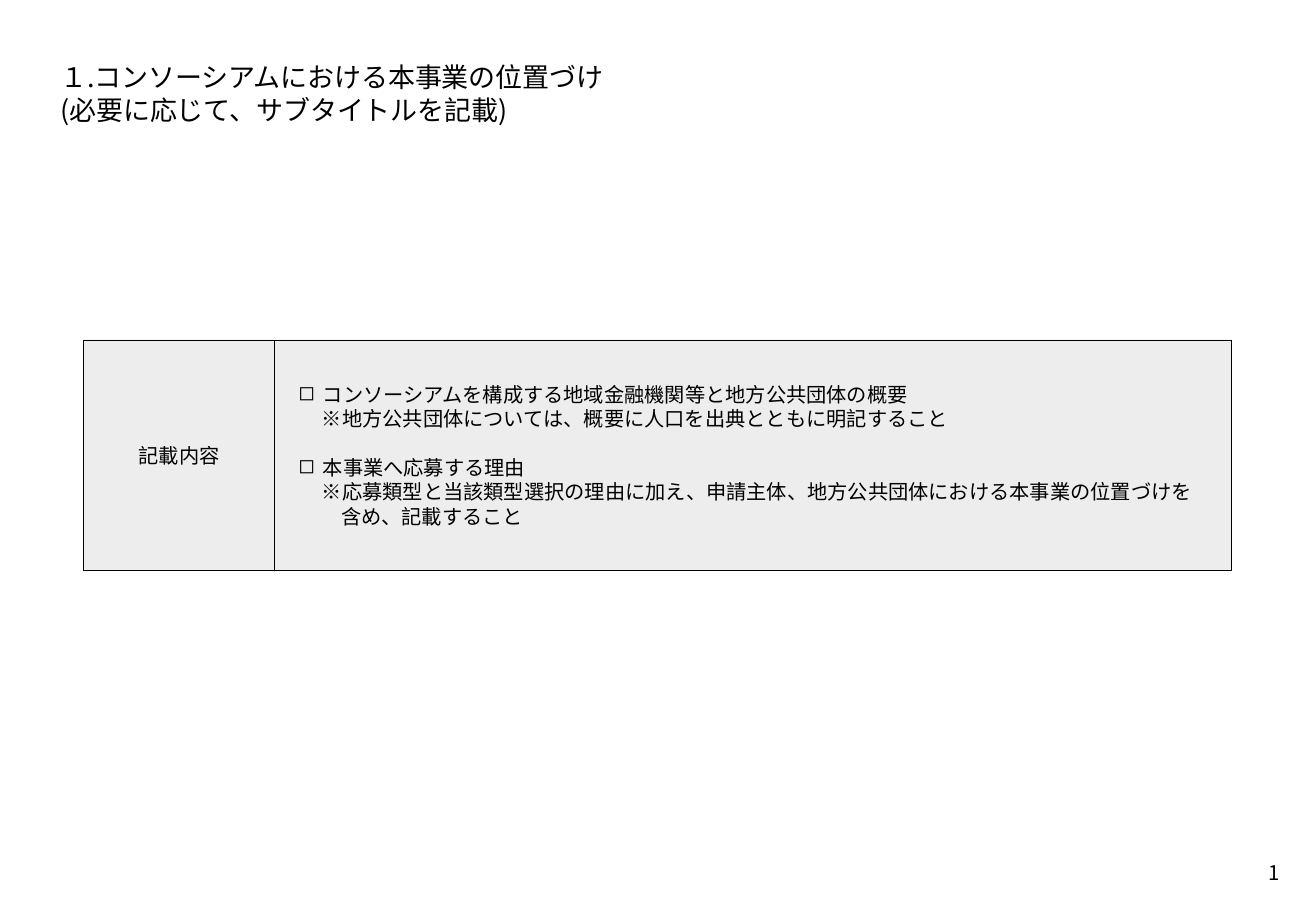
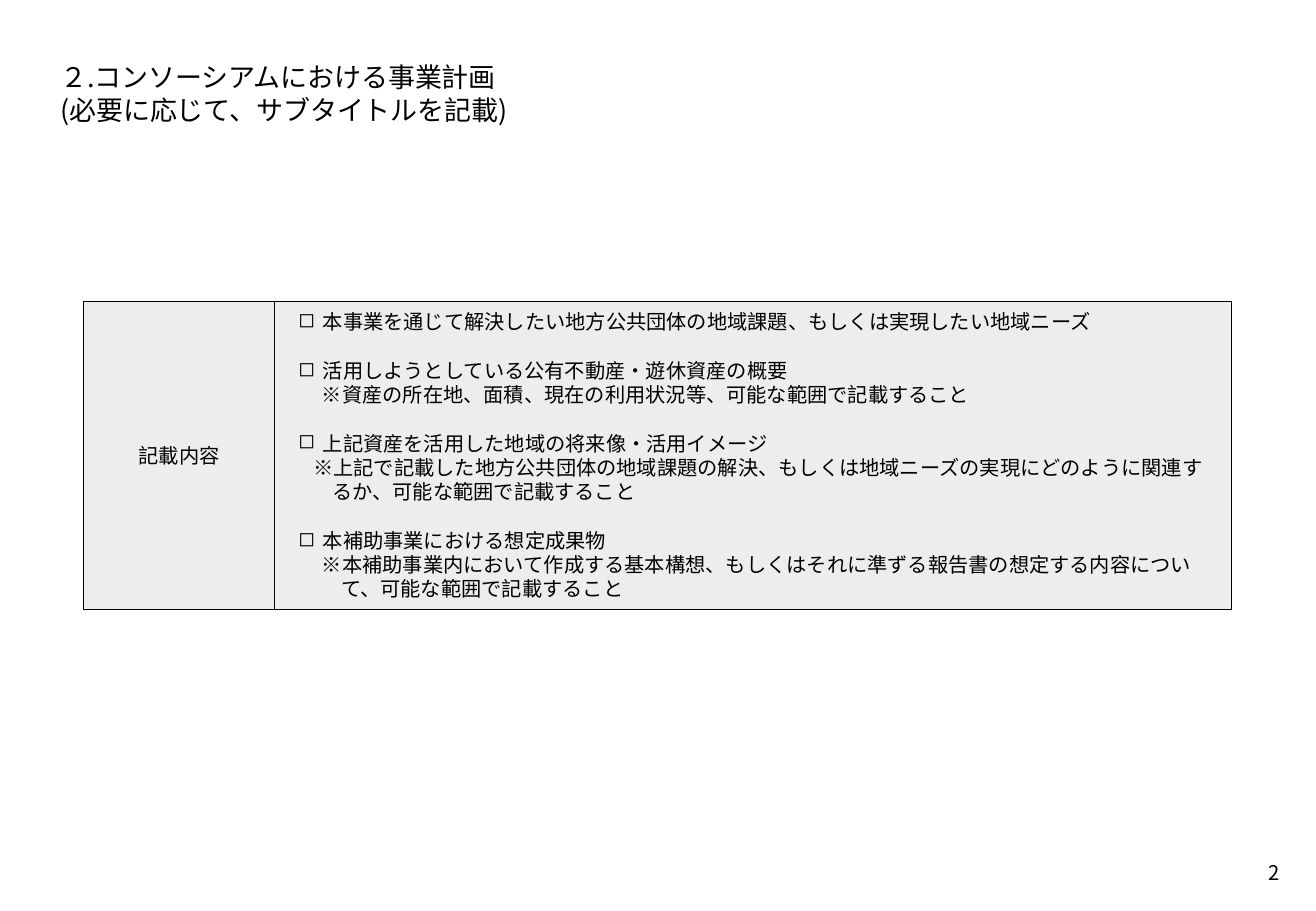
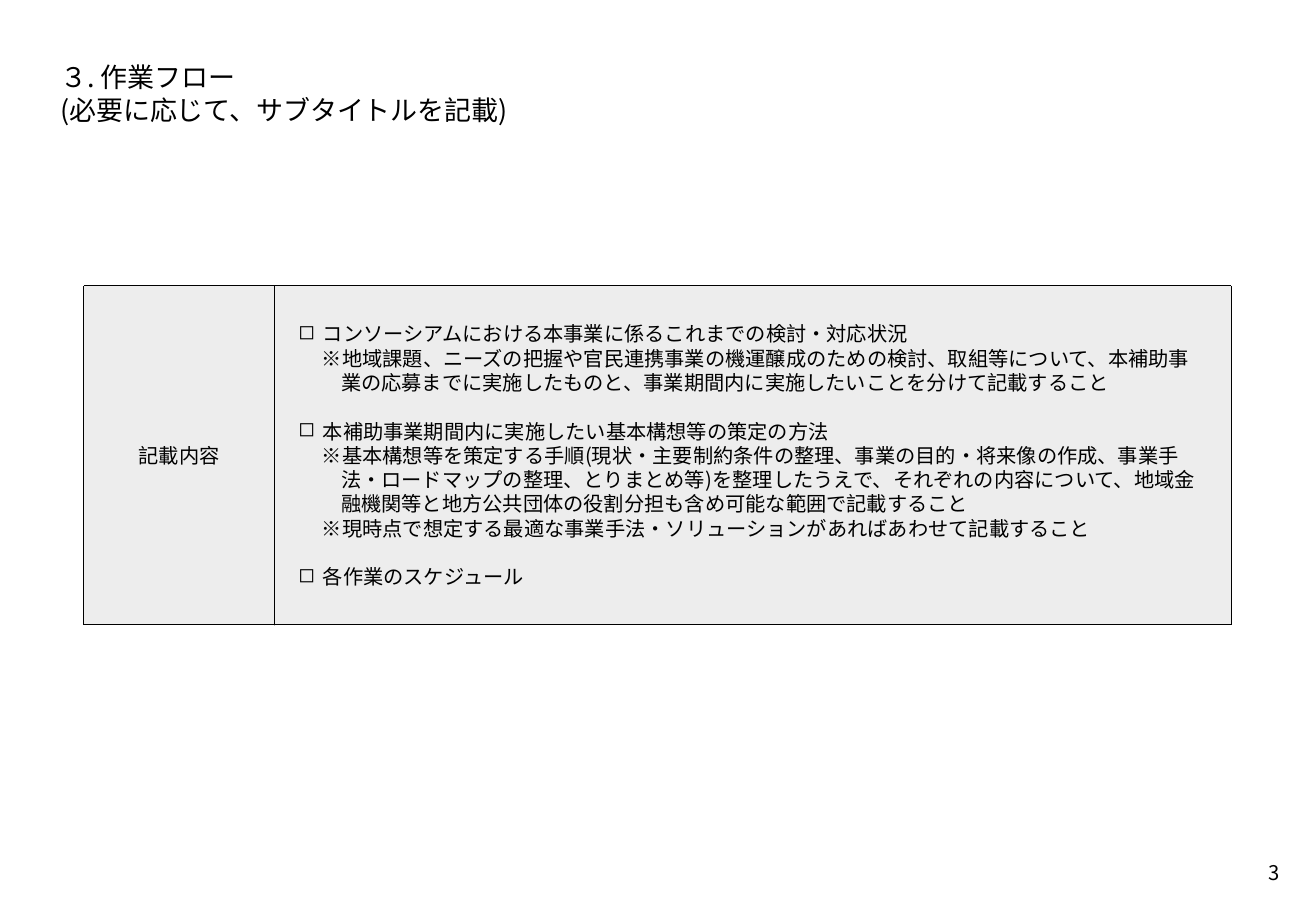
import pptx
import pptx.util
import pptx.dml.color
import pptx.enum.dml
import pptx.enum.shapes
import pptx.enum.text
import pptx.oxml.ns
from lxml import etree

Cm, Pt = pptx.util.Cm, pptx.util.Pt
ALIGN = pptx.enum.text.PP_ALIGN
ANCHOR = pptx.enum.text.MSO_ANCHOR
qn = pptx.oxml.ns.qn

# Shared style
FONT = "Noto Sans CJK JP"
INK, PALE = "000000", "EDEDED"
HEAD, BODY = 16, 12
PITCH = {HEAD: 19.5, BODY: 14.4}
WIDTH, HEIGHT = 27.51, 19.05
LEFT, SPLIT, RIGHT = 1.75, 5.74, 25.73
MIDDLE = 9.52
SUB = "(必要に応じて、サブタイトルを記載)"
LABEL = "記載内容"

# Left margin and hanging indent of each kind of line, in cm
INDENT = {"item": (0.51, -0.51), "note": (0.89, -0.4), "near": (0.71, -0.4)}

# Title, box height in cm, lines of the box
PAGES = [
    ("１.コンソーシアムにおける本事業の位置づけ", 4.83, [
        ("item", "コンソーシアムを構成する地域金融機関等と地方公共団体の概要"),
        ("note", "※地方公共団体については、概要に人口を出典とともに明記すること"),
        ("item", "本事業へ応募する理由"),
        ("note", "※応募類型と当該類型選択の理由に加え、申請主体、地方公共団体における"
                 "本事業の位置づけを含め、記載すること"),
    ]),
    ("２.コンソーシアムにおける事業計画", 6.45, [
        ("item", "本事業を通じて解決したい地方公共団体の地域課題、もしくは実現したい地域ニーズ"),
        ("item", "活用しようとしている公有不動産・遊休資産の概要"),
        ("note", "※資産の所在地、面積、現在の利用状況等、可能な範囲で記載すること"),
        ("item", "上記資産を活用した地域の将来像・活用イメージ"),
        ("near", "※上記で記載した地方公共団体の地域課題の解決、もしくは地域ニーズの"
                 "実現にどのように関連するか、可能な範囲で記載すること"),
        ("item", "本補助事業における想定成果物"),
        ("note", "※本補助事業内において作成する基本構想、もしくはそれに準ずる報告書の"
                 "想定する内容について、可能な範囲で記載すること"),
    ]),
    ("３. 作業フロー", 7.09, [
        ("item", "コンソーシアムにおける本事業に係るこれまでの検討・対応状況"),
        ("note", "※地域課題、ニーズの把握や官民連携事業の機運醸成のための検討、取組等に"
                 "ついて、本補助事業の応募までに実施したものと、事業期間内に実施したい"
                 "ことを分けて記載すること"),
        ("item", "本補助事業期間内に実施したい基本構想等の策定の方法"),
        ("note", "※基本構想等を策定する手順(現状・主要制約条件の整理、事業の目的・"
                 "将来像の作成、事業手法・ロードマップの整理、とりまとめ等)を整理した"
                 "うえで、それぞれの内容について、地域金融機関等と地方公共団体の"
                 "役割分担も含め可能な範囲で記載すること"),
        ("note", "※現時点で想定する最適な事業手法・ソリューションがあればあわせて記載すること"),
        ("item", "各作業のスケジュール"),
    ]),
]


def color(code):
    return pptx.dml.color.RGBColor.from_string(code)


def setup(frame, inset, anchor, wrap=True):
    frame.margin_left = frame.margin_right = Cm(inset)
    frame.margin_top = frame.margin_bottom = Cm(inset)
    frame.vertical_anchor = anchor
    frame.auto_size = pptx.enum.text.MSO_AUTO_SIZE.NONE
    frame.word_wrap = wrap


def write(para, text, size, align=ALIGN.LEFT, gap=0):
    """Add one run to a paragraph and return it."""
    para.alignment = align
    para.line_spacing = Pt(PITCH[size])
    para.space_before = Pt(gap)
    run = para.add_run()
    run.text = text
    run.font.name = FONT
    run.font.size = Pt(size)
    run.font.color.rgb = color(INK)
    east = etree.SubElement(run.font._element, qn("a:ea"))
    east.set("typeface", FONT)
    return run


def next_para(frame, index):
    return frame.add_paragraph() if index else frame.paragraphs[0]


def add_title(slide, text):
    title = slide.shapes.title
    title.left, title.top = Cm(0.76), Cm(0.76)
    title.width, title.height = Cm(26), Cm(2)
    frame = title.text_frame
    setup(frame, 0.5, ANCHOR.TOP)
    for index, line in enumerate((text, SUB)):
        write(next_para(frame, index), line, HEAD)


def add_number(slide, number):
    box = slide.shapes.add_textbox(Cm(26), Cm(17.75), Cm(1), Cm(1))
    setup(box.text_frame, 0.25, ANCHOR.TOP, wrap=False)
    run = write(box.text_frame.paragraphs[0], str(number), BODY, ALIGN.RIGHT)
    # Turn the run into a slide number field
    field = run._r
    field.tag = qn("a:fld")
    field.set("id", "{B6F15528-21DE-4FAA-801E-634DDDAF4B2B}")
    field.set("type", "slidenum")


def add_cell(group, left, right, height):
    cell = group.shapes.add_shape(
        pptx.enum.shapes.MSO_SHAPE.RECTANGLE,
        Cm(left), Cm(MIDDLE - height / 2), Cm(right - left), Cm(height))
    cell.shadow.inherit = False
    cell.fill.solid()
    cell.fill.fore_color.rgb = color(PALE)
    cell.line.color.rgb = color(INK)
    cell.line.width = Pt(0.25)
    cell.line.dash_style = pptx.enum.dml.MSO_LINE.ROUND_DOT
    frame = cell.text_frame
    setup(frame, 0.5, ANCHOR.MIDDLE)
    frame.margin_top = frame.margin_bottom = 0
    return frame


def indent(para, kind):
    left, hang = INDENT[kind]
    props = para._p.get_or_add_pPr()
    props.set("marL", str(Cm(left)))
    props.set("indent", str(Cm(hang)))
    if kind == "item":
        etree.SubElement(props, qn("a:buChar")).set("char", "◻")
    else:
        etree.SubElement(props, qn("a:buNone"))


def add_panel(slide, height, lines):
    group = slide.shapes.add_group_shape()
    frame = add_cell(group, SPLIT, RIGHT, height)
    for index, (kind, text) in enumerate(lines):
        para = next_para(frame, index)
        indent(para, kind)
        gap = PITCH[BODY] if index and kind == "item" else 0
        write(para, text, BODY, gap=gap)
    label = add_cell(group, LEFT, SPLIT, height)
    write(label.paragraphs[0], LABEL, BODY, ALIGN.CENTER)


def main():
    deck = pptx.Presentation()
    deck.slide_width, deck.slide_height = Cm(WIDTH), Cm(HEIGHT)
    layout = deck.slide_layouts.get_by_name("Title Only")
    for number, (title, height, lines) in enumerate(PAGES, 1):
        slide = deck.slides.add_slide(layout)
        add_title(slide, title)
        add_number(slide, number)
        add_panel(slide, height, lines)
    deck.save("out.pptx")


if __name__ == "__main__":
    main()
